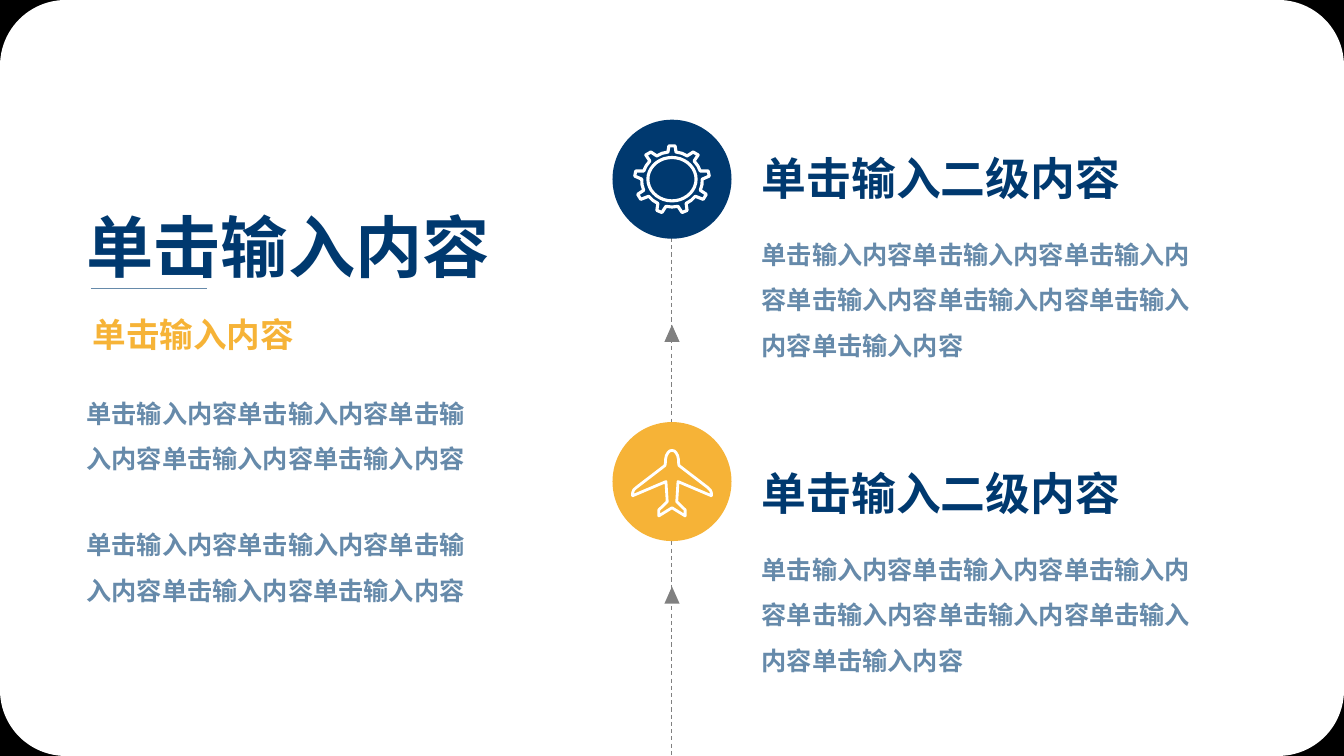
import math
import pptx
import pptx.util
import pptx.dml.color
import pptx.enum.dml
import pptx.enum.shapes
import pptx.enum.text
import pptx.oxml

Pt = pptx.util.Pt
SHAPE = pptx.enum.shapes.MSO_SHAPE
COLORS = {"black": "000000", "white": "FFFFFF", "navy": "00396F",
          "blue": "668AAA", "gold": "F6B337", "gray": "808080"}
FONT = "Noto Sans CJK SC"
WIDTH, HEIGHT = 960, 540
AXIS, CIRCLE = 480, 85

PHRASE = "单击输入内容"
STYLES = {
    "title": {"size": 48, "color": "navy"},
    "subtitle": {"size": 24, "color": "gold"},
    "heading": {"size": 32, "color": "navy"},
    "body": {"size": 18, "color": "blue"},
}
INTRO = [
    ("title", PHRASE, (54.7, 114.5, 425.5, 84.2)),
    ("subtitle", PHRASE, (59, 206.6, 311.8, 46)),
    ("body", PHRASE * 5, (54.7, 270, 295.2, 67.7)),
    ("body", PHRASE * 5, (54.7, 364, 295.2, 67.7)),
]
GEAR = [(2.2, -23.8), (2.9, -19.4), (7, -18.5), (10.8, -16.6), (15.1, -19.4),
        (18.7, -17.3), (15.8, -13), (18.5, -9.5), (20.2, -5.8), (25.9, -5.8),
        (26.6, -2.2), (21.6, 0), (21.4, 4), (20.2, 7.9), (24.5, 10.8),
        (22.3, 14.4), (16.6, 12.2), (13.7, 15.1), (10.1, 17.3), (10.8, 22.3),
        (7.2, 23.8), (4.3, 19.4), (0, 19.9)]
PLANE = [(0, -22.3), (1.6, -21.9), (2.9, -20.6), (4, -18.7), (4.6, -16),
         (4.6, -14.4), (5, -11.5), (25.6, 4.3), (27.4, 6.1), (28.1, 7.9),
         (28.1, 10.1), (4.3, 0), (3.4, 14.4), (9.4, 20.2), (9.4, 24.5), (0, 18.7)]
RING = [(17.2 * math.cos(math.radians(a)), 15.5 * math.sin(math.radians(a)))
        for a in range(0, 360, 10)]
STAGES = [
    {"heading": "单击输入二级内容", "body": PHRASE * 7, "y": 128, "text_y": 85,
     "arrow_y": 232, "fill": "navy", "half": GEAR, "inner": RING, "weight": 2.25},
    {"heading": "单击输入二级内容", "body": PHRASE * 7, "y": 344, "text_y": 310,
     "arrow_y": 419, "fill": "gold", "half": PLANE, "inner": [], "weight": 2},
]


def rgb(name):
    return pptx.dml.color.RGBColor.from_string(COLORS[name])


def add_solid(s, kind, box, fill):
    sp = s.shapes.add_shape(kind, *map(Pt, box))
    sp.shadow.inherit = False
    sp.fill.solid()
    sp.fill.fore_color.rgb = rgb(fill)
    sp.line.fill.background()
    return sp


def add_line(s, ends, color, weight):
    sp = s.shapes.add_connector(pptx.enum.shapes.MSO_CONNECTOR.STRAIGHT, *map(Pt, ends))
    sp.line.color.rgb = rgb(color)
    sp.line.width = Pt(weight)
    props = sp._element.spPr
    props.append(props.makeelement(pptx.oxml.ns.qn("a:effectLst"), {}))
    return sp


def add_text(s, style, text, box):
    tf = s.shapes.add_textbox(*map(Pt, box)).text_frame
    tf.word_wrap = True
    tf.auto_size = pptx.enum.text.MSO_AUTO_SIZE.SHAPE_TO_FIT_TEXT
    p = tf.paragraphs[0]
    p.line_spacing = 1.5
    r = p.add_run()
    r.text = text
    look = STYLES[style]
    for key, value in {"name": FONT, "size": Pt(look["size"]), "bold": True}.items():
        setattr(r.font, key, value)
    r.font.color.rgb = rgb(look["color"])
    fonts = r.font._element
    east = fonts.makeelement(pptx.oxml.ns.qn("a:ea"), {"typeface": FONT})
    fonts.find(pptx.oxml.ns.qn("a:latin")).addnext(east)


def add_icon(s, stage):
    half = stage["half"]
    outline = half + [(-x, y) for x, y in reversed(half) if x]
    contours = [[(Pt(AXIS + x), Pt(stage["y"] + y)) for x, y in points]
                for points in (outline, stage["inner"]) if points]
    builder = s.shapes.build_freeform(*contours[0][0])
    for i, points in enumerate(contours):
        if i:
            builder.move_to(*points[0])
        builder.add_line_segments(points[1:], close=True)
    sp = builder.convert_to_shape()
    sp.shadow.inherit = False
    sp.fill.background()
    sp.line.color.rgb = rgb("white")
    sp.line.width = Pt(stage["weight"])


def main():
    prs = pptx.Presentation()
    prs.slide_width, prs.slide_height = Pt(WIDTH), Pt(HEIGHT)
    s = prs.slides.add_slide(prs.slide_layouts[6])
    s.background.fill.solid()
    s.background.fill.fore_color.rgb = rgb("black")
    panel = add_solid(s, SHAPE.ROUNDED_RECTANGLE, (0, 0, WIDTH, HEIGHT), "white")
    panel.adjustments[0] = 0.087

    for item in INTRO:
        add_text(s, *item)
    add_line(s, (65, 206.3, 147.8, 206.3), "blue", 0.5)

    track = add_line(s, (AXIS, 170, AXIS, HEIGHT), "gray", 0.75)
    track.line.dash_style = pptx.enum.dml.MSO_LINE.DASH
    for stage in STAGES:
        top = stage["text_y"]
        add_text(s, "heading", stage["heading"], (537, top, 311.8, 58.3))
        add_text(s, "body", stage["body"], (537, top + 71.5, 331.2, 100))
        box = (AXIS - CIRCLE / 2, stage["y"] - CIRCLE / 2, CIRCLE, CIRCLE)
        add_solid(s, SHAPE.OVAL, box, stage["fill"])
        add_solid(s, SHAPE.ISOSCELES_TRIANGLE,
                  (AXIS - 5.4, stage["arrow_y"], 10.8, 12.2), "gray")
        add_icon(s, stage)
    prs.save("out.pptx")


if __name__ == "__main__":
    main()
